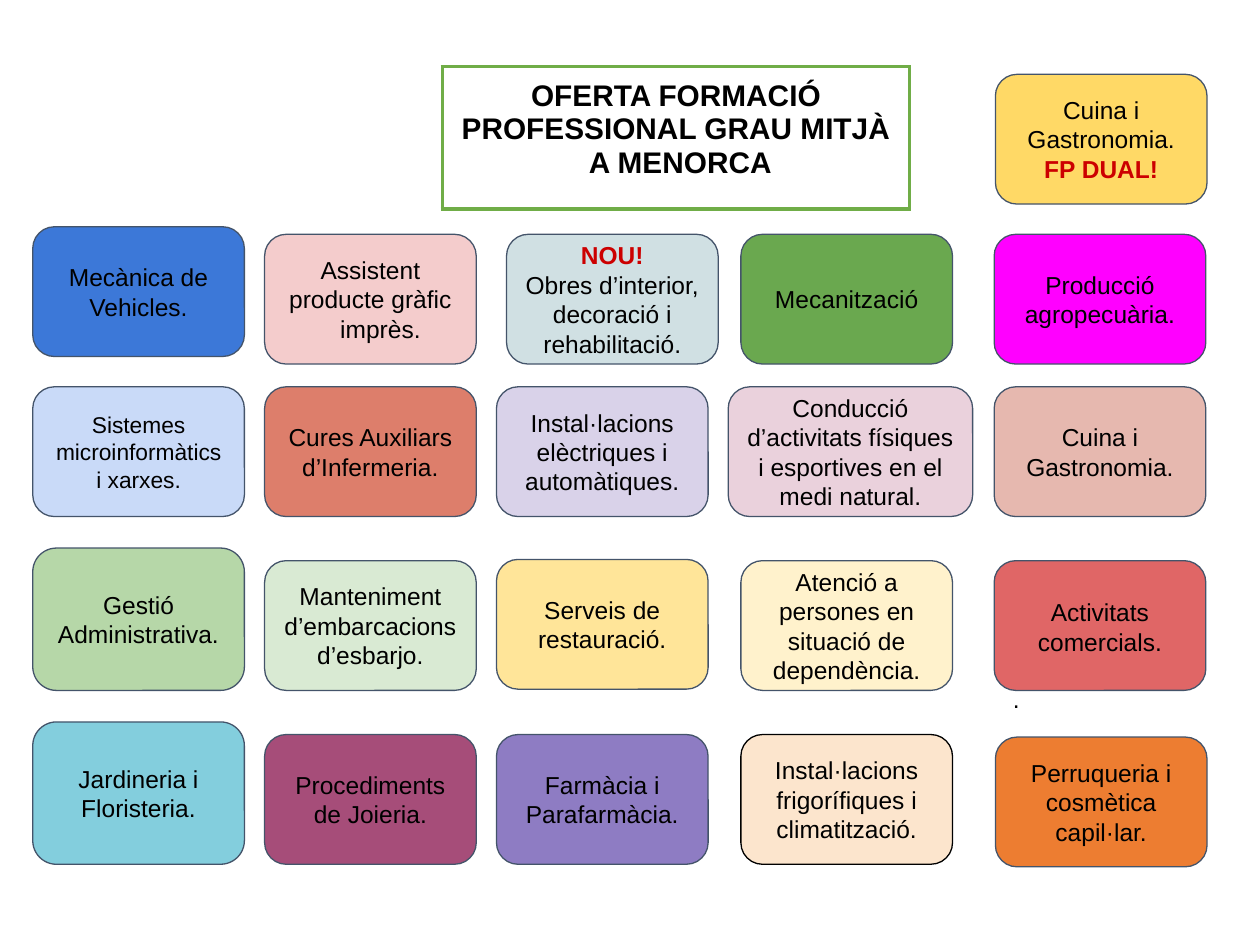
from lxml import etree
from pptx import Presentation
from pptx.dml.color import RGBColor
from pptx.enum import shapes, text
from pptx.oxml import ns
from pptx.util import Inches, Pt

BLACK = RGBColor(0x00, 0x00, 0x00)
RED = RGBColor(0xCC, 0x00, 0x00)
SLATE = RGBColor(0x44, 0x54, 0x6A)
GREEN = RGBColor(0x70, 0xAD, 0x47)
LEFT, MID = text.PP_ALIGN.LEFT, text.PP_ALIGN.CENTER

COLS = [0.26, 2.1, 3.94, 5.88, 7.89]
ROWS = [0.59, 1.86, 3.07, 4.45, 5.83]
WIDE, TALL, PAD = 1.68, 1.03, 0.1
ALERT = {"color": RED, "bold": True}

TITLE = [("OFERTA FORMACIÓ PROFESSIONAL GRAU MITJÀ", {}),
         ("A MENORCA", {"indent": 0.07})]

CARDS = [
    (0, 4, "FFD966", [("Cuina i Gastronomia.", {}), ("FP DUAL!", ALERT)], {"dx": 0.01}),
    (1, 0, "3C78D8", "Mecànica de Vehicles.", {"dy": -0.06}),
    (1, 1, "F4CCCC", [("Assistent producte gràfic", {}), ("imprès.", {"indent": 0.16})], {}),
    (1, 2, "D0E0E3", [("NOU!", ALERT),
                      ("Obres d’interior, decoració i rehabilitació.", {})], {"dx": 0.08}),
    (1, 3, "6AA84F", "Mecanització", {}),
    (1, 4, "FF00FF", "Producció agropecuària.", {}),
    (2, 0, "C9DAF8", [("Sistemes microinformàtics i xarxes.", {"size": 13})], {}),
    (2, 1, "DD7E6B", "Cures Auxiliars d’Infermeria.", {}),
    (2, 2, "D9D2E9", "Instal·lacions elèctriques i automàtiques.", {}),
    (2, 3, "EAD1DC", "Conducció d’activitats físiques i esportives en el medi natural.",
     {"dx": -0.1, "grow": 0.26}),
    (2, 4, "E6B8AF", "Cuina i Gastronomia.", {}),
    (3, 0, "B6D7A8", "Gestió Administrativa.", {"dy": -0.1, "rise": 0.1}),
    (3, 1, "D9EAD3", "Manteniment d’embarcacions d’esbarjo.", {}),
    (3, 2, "FFE599", "Serveis de restauració.", {"dy": -0.01}),
    (3, 3, "FFF2CC", "Atenció a persones en situació de dependència.", {}),
    (3, 4, "E06666", [("Activitats comercials.", {}), (".", {"align": LEFT, "before": 16})],
     {"top": 0.24}),
    (4, 0, "83CEDD", "Jardineria i Floristeria.", {"dy": -0.1, "rise": 0.1}),
    (4, 1, "A64D79", "Procediments de Joieria.", {}),
    (4, 2, "8E7CC3", "Farmàcia i Parafarmàcia.", {}),
    (4, 3, "FCE5CD", "Instal·lacions frigorífiques i climatització.", {"edge": BLACK}),
    (4, 4, "ED7D31", "Perruqueria i cosmètica capil·lar.", {"dx": 0.01, "dy": 0.02}),
]


def write(para, words, size=14, color=BLACK, bold=False, align=MID, indent=0, before=0):
    para.text = words
    para.alignment = align
    para.space_before = Pt(before)
    if indent:
        props = para._p.get_or_add_pPr()
        props.set("marL", str(Inches(indent)))
        props.set("indent", "0")
    font = para.font
    font.name, font.size, font.bold = "Arial", Pt(size), bold
    font.color.rgb = color


def fill_text(frame, lines, **base):
    for i, (words, opts) in enumerate(lines):
        para = frame.add_paragraph() if i else frame.paragraphs[0]
        write(para, words, **{**base, **opts})


def add_title(slide):
    frame = slide.shapes.add_table(1, 1, Inches(3.51), Inches(0.53), Inches(3.71), Inches(1.13))
    grid = frame.table
    grid.first_row = grid.horz_banding = False
    cell = grid.cell(0, 0)
    cell.margin_left = cell.margin_right = cell.margin_top = cell.margin_bottom = Inches(PAD)
    props = cell._tc.get_or_add_tcPr()
    for side in ("lnL", "lnR", "lnT", "lnB"):
        line = etree.SubElement(props, ns.qn("a:" + side), w=str(Pt(2.25)))
        solid = etree.SubElement(line, ns.qn("a:solidFill"))
        etree.SubElement(solid, ns.qn("a:srgbClr"), val=str(GREEN))
    cell.fill.background()
    fill_text(cell.text_frame, TITLE, size=17, bold=True)


def add_card(slide, row, col, tint, lines, dx=0, dy=0, grow=0, rise=0, top=0, edge=SLATE):
    card = slide.shapes.add_shape(
        shapes.MSO_SHAPE.ROUNDED_RECTANGLE, Inches(COLS[col] + dx), Inches(ROWS[row] + dy),
        Inches(WIDE + grow), Inches(TALL + rise))
    card.shadow.inherit = False
    card.fill.solid()
    card.fill.fore_color.rgb = RGBColor.from_string(tint)
    card.line.color.rgb = edge
    card.line.width = Pt(0.75)
    frame = card.text_frame
    frame.word_wrap = True
    frame.margin_left = frame.margin_right = frame.margin_bottom = Inches(PAD)
    frame.margin_top = Inches(top or PAD)
    frame.vertical_anchor = text.MSO_ANCHOR.TOP if top else text.MSO_ANCHOR.MIDDLE
    fill_text(frame, [(lines, {})] if isinstance(lines, str) else lines)


def main():
    deck = Presentation()
    deck.slide_width, deck.slide_height = Inches(10), Inches(7.5)
    slide = deck.slides.add_slide(deck.slide_layouts[6])
    add_title(slide)
    for row, col, tint, lines, opts in CARDS:
        add_card(slide, row, col, tint, lines, **opts)
    deck.save("out.pptx")


if __name__ == "__main__":
    main()
